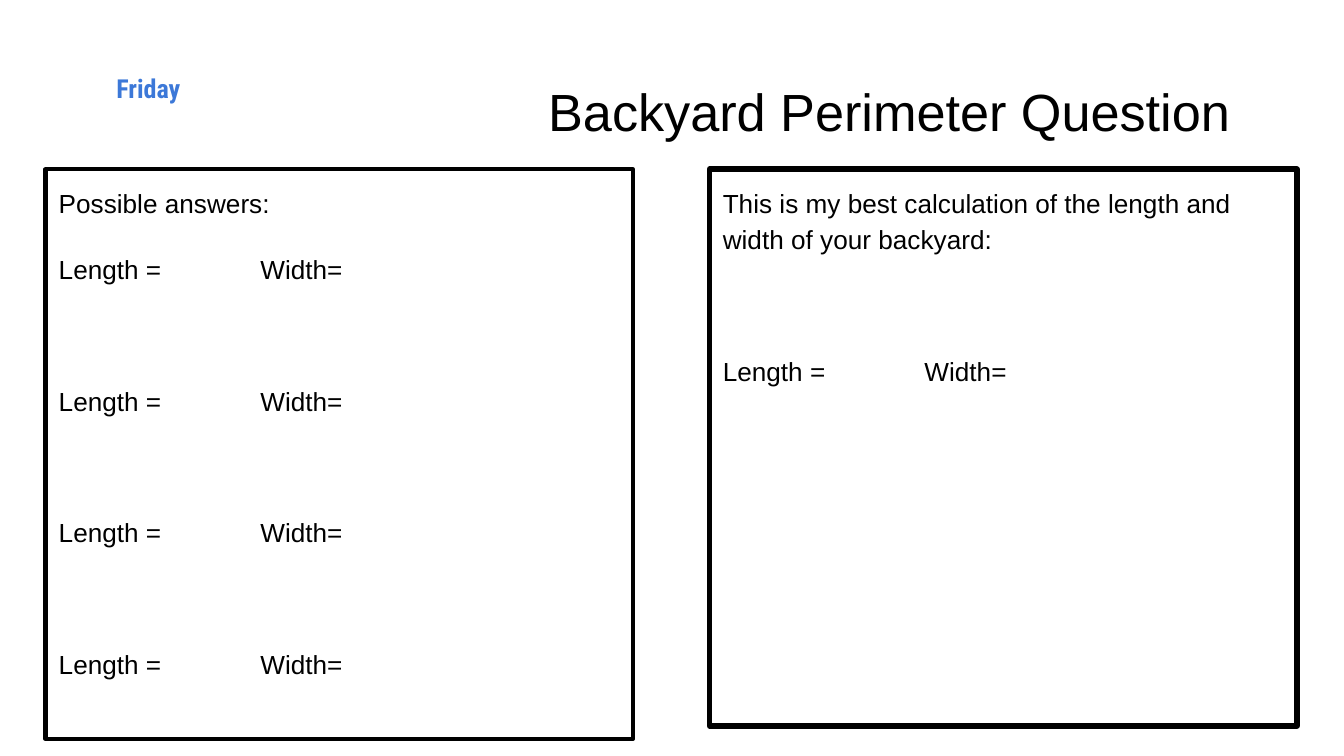
from dataclasses import dataclass

from lxml.etree import SubElement
from pptx import Presentation
from pptx.dml.color import RGBColor
from pptx.enum.text import MSO_ANCHOR, MSO_AUTO_SIZE, PP_ALIGN
from pptx.oxml.ns import qn
from pptx.util import Cm, Pt


@dataclass(frozen=True)
class Theme:
    ink: str = "000000"
    accent: str = "3C78D8"
    accent_outline: str = "1155CC"
    font: str = "Arial"
    label_font: str = "Roboto Condensed"
    title_size: float = 28
    body_size: float = 14
    line_spacing: float = 1.15
    near_gap: float = 16
    far_gap: float = 51.35


def write(para, text, *, font, size, color, bold=False, align=PP_ALIGN.LEFT,
          spacing=1.0, before=0, outline=None):
    para.alignment = align
    para.line_spacing = spacing
    para.space_before = Pt(before)
    span = para.add_run()
    span.text = text
    span.font.name = font
    span.font.size = Pt(size)
    span.font.bold = bold
    span.font.color.rgb = RGBColor.from_string(color)
    if outline:
        line = SubElement(span.font._element, qn("a:ln"), w=str(Pt(0.75)))
        fill = SubElement(line, qn("a:solidFill"))
        SubElement(fill, qn("a:srgbClr"), val=outline)
        span.font._element.insert(0, line)


class Worksheet:
    """Builds the elements of one slide in a shared style."""

    def __init__(self, page, theme):
        self.page = page
        self.theme = theme

    def place(self, box, left, top, width, height, inset=0.25):
        box.left, box.top, box.width, box.height = map(Cm, (left, top, width, height))
        frame = box.text_frame
        frame.word_wrap = True
        frame.auto_size = MSO_AUTO_SIZE.NONE
        frame.vertical_anchor = MSO_ANCHOR.TOP
        frame.margin_left = frame.margin_right = Cm(0.25)
        frame.margin_top = frame.margin_bottom = Cm(inset)
        return frame

    def title(self, text, *bounds):
        frame = self.place(self.page.shapes.title, *bounds)
        write(frame.paragraphs[0], text, font=self.theme.font,
              size=self.theme.title_size, color=self.theme.ink)

    def panel(self, index, entries, border, *bounds):
        theme = self.theme
        box = self.page.placeholders[index]
        frame = self.place(box, *bounds)
        box.line.color.rgb = RGBColor.from_string(theme.ink)
        box.line.width = Pt(border)
        for number, (text, before) in enumerate(entries):
            para = frame.add_paragraph() if number else frame.paragraphs[0]
            write(para, text, font=theme.font, size=theme.body_size, color=theme.ink,
                  spacing=theme.line_spacing, before=before)
            properties = para._p.get_or_add_pPr()
            properties.set("marL", "0")
            properties.set("indent", "0")
            SubElement(properties, qn("a:buNone"))

    def label(self, text, *bounds):
        theme = self.theme
        box = self.page.shapes.add_textbox(0, 0, 0, 0)
        frame = self.place(box, *bounds, inset=0.13)
        write(frame.paragraphs[0], text, font=theme.label_font, size=theme.body_size,
              color=theme.accent, bold=True, align=PP_ALIGN.CENTER,
              outline=theme.accent_outline)


def main():
    deck = Presentation()
    deck.slide_width, deck.slide_height = Cm(25.4), Cm(14.29)
    theme = Theme()
    sheet = Worksheet(deck.slides.add_slide(deck.slide_layouts[3]), theme)
    blanks = "Length = \t\tWidth="
    far_blanks = (blanks, theme.far_gap)

    sheet.title("Backyard Perimeter Question", 10.11, 1.24, 14.43, 1.6)
    sheet.panel(1, [("Possible answers:", 0), (blanks, theme.near_gap)] + [far_blanks] * 3,
                2.25, 0.86, 3.2, 11.1, 10.77)
    sheet.panel(2, [("This is my best calculation of the length and width of your backyard:", 0),
                    far_blanks],
                3, 13.41, 3.2, 11.1, 10.52)
    sheet.label("Friday", 0.86, 1.24, 3.89, 1.78)
    deck.save("out.pptx")


if __name__ == "__main__":
    main()
